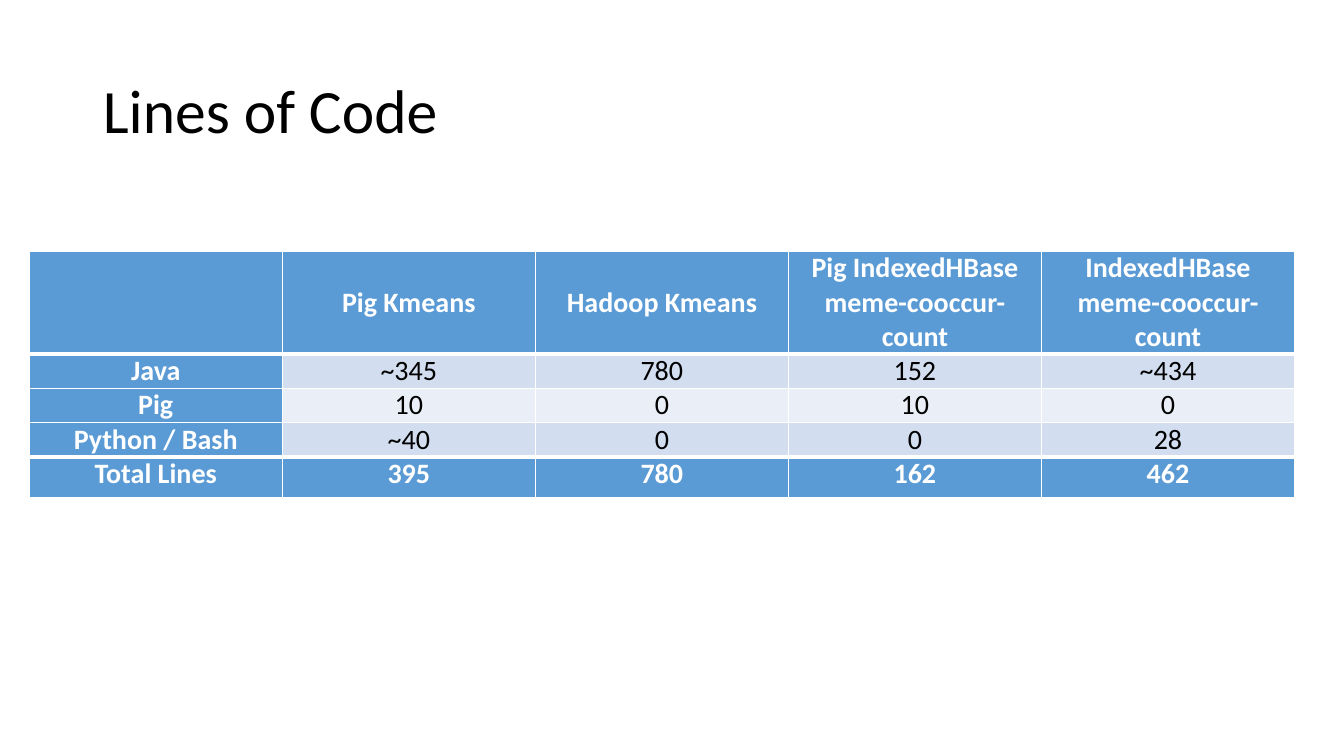
import pptx
import pptx.util
import pptx.dml.color
import pptx.enum.text
import pptx.oxml
import pptx.oxml.ns
from pptx.util import Inches, Pt

TITLE = "Lines of Code"
LINE_COUNTS = [
    ["", "Pig Kmeans", "Hadoop Kmeans",
     "Pig IndexedHBase\nmeme-cooccur-count", "IndexedHBase\nmeme-cooccur-count"],
    ["Java", "~345", "780", "152", "~434"],
    ["Pig", "10", "0", "10", "0"],
    ["Python / Bash", "~40", "0", "0", "28"],
    ["Total Lines", "395", "780", "162", "462"],
]
ROW_HEIGHTS = [0.95, 0.32, 0.32, 0.32, 0.4]
COLUMN_WIDTH = 2.51
FONT = "Calibri"
COLORS = {"header": "5B9BD5", "odd": "D2DEEF", "even": "EAEFF7",
          "light": "FFFFFF", "dark": "000000"}
HEADER_ROW, TOTAL_ROW = 0, len(LINE_COUNTS) - 1


def rgb(name):
    return pptx.dml.color.RGBColor.from_string(COLORS[name])


def style_paragraph(paragraph, size, color, align, bold=False):
    paragraph.alignment = align
    paragraph.font.size = Pt(size)
    for run in paragraph.runs:
        run.font.name = FONT
        run.font.size = Pt(size)
        run.font.bold = bold
        run.font.color.rgb = rgb(color)


def add_borders(cell, row):
    """White rules, thicker below the header and above the totals."""
    heavy_rows = {"T": (HEADER_ROW + 1, TOTAL_ROW), "B": (HEADER_ROW, TOTAL_ROW - 1)}
    properties = cell._tc.get_or_add_tcPr()
    for side in "LRTB":
        width = Pt(3 if row in heavy_rows.get(side, ()) else 1)
        properties.append(pptx.oxml.parse_xml(
            f'<a:ln{side} {pptx.oxml.ns.nsdecls("a")} w="{width}"><a:solidFill>'
            f'<a:srgbClr val="{COLORS["light"]}"/></a:solidFill></a:ln{side}>'))


def fill_cell(cell, content, row, column):
    emphasized = row in (HEADER_ROW, TOTAL_ROW) or column == 0
    add_borders(cell, row)
    cell.fill.solid()
    cell.fill.fore_color.rgb = rgb(
        "header" if emphasized else "odd" if row % 2 else "even")
    cell.margin_left = cell.margin_right = Inches(0.18)
    cell.margin_top = cell.margin_bottom = 0
    anchors = pptx.enum.text.MSO_ANCHOR
    cell.vertical_anchor = anchors.MIDDLE if row == HEADER_ROW else anchors.TOP
    cell.text_frame.text = content
    for paragraph in cell.text_frame.paragraphs:
        style_paragraph(paragraph, 20, "light" if emphasized else "dark",
                        pptx.enum.text.PP_ALIGN.CENTER, emphasized)


def main():
    presentation = pptx.Presentation()
    presentation.slide_width = Inches(13.33)
    presentation.slide_height = Inches(7.5)
    slide = presentation.slides.add_slide(presentation.slide_layouts[5])

    title = slide.shapes.title
    title.left, title.top = Inches(0.92), Inches(0.4)
    title.width, title.height = Inches(11.5), Inches(1.45)
    title.text_frame.text = TITLE
    title.text_frame.vertical_anchor = pptx.enum.text.MSO_ANCHOR.MIDDLE
    heading = title.text_frame.paragraphs[0]
    heading.line_spacing = 0.9
    style_paragraph(heading, 44, "dark", pptx.enum.text.PP_ALIGN.LEFT)

    column_count = len(LINE_COUNTS[0])
    table = slide.shapes.add_table(
        len(LINE_COUNTS), column_count, Inches(0.29), Inches(2.49),
        Inches(COLUMN_WIDTH * column_count), Inches(sum(ROW_HEIGHTS))).table
    for column in table.columns:
        column.width = Inches(COLUMN_WIDTH)
    for row, (contents, height) in enumerate(zip(LINE_COUNTS, ROW_HEIGHTS)):
        table.rows[row].height = Inches(height)
        for column, content in enumerate(contents):
            fill_cell(table.cell(row, column), content, row, column)

    presentation.save("out.pptx")


if __name__ == "__main__":
    main()
